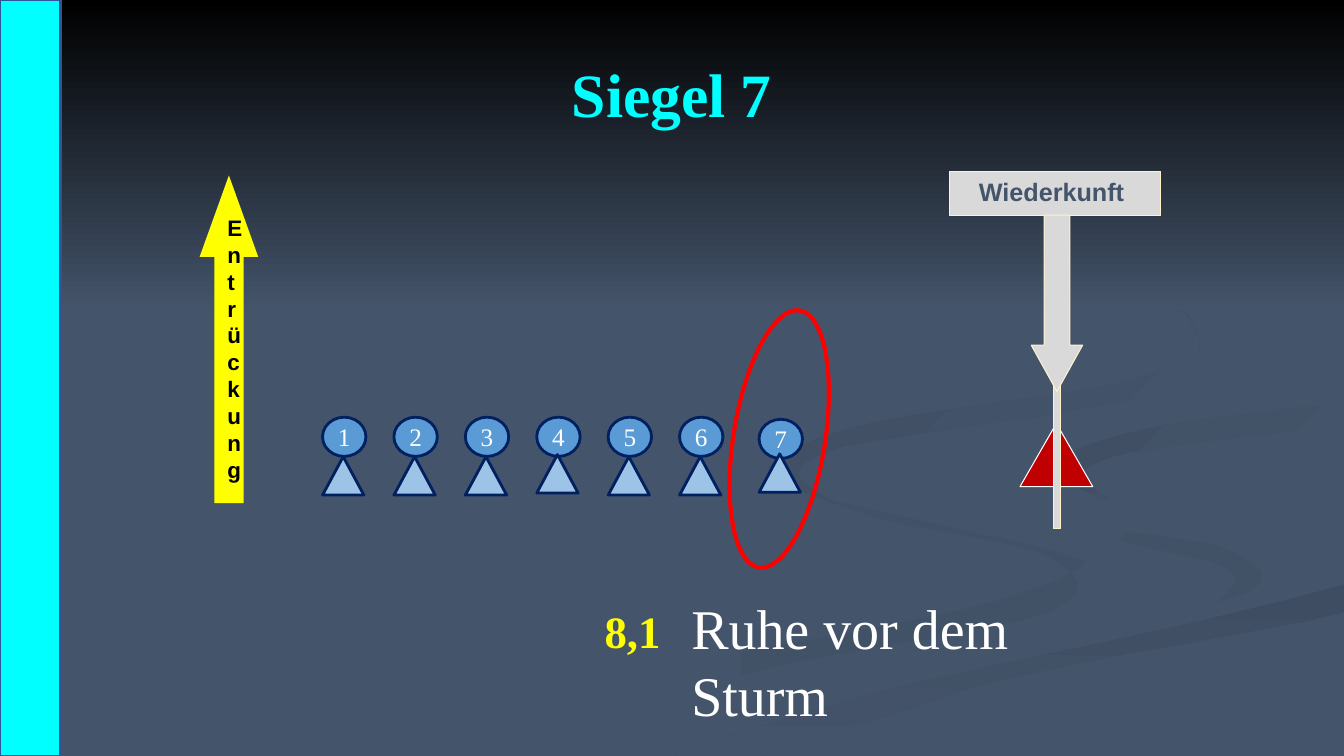
from typing import NamedTuple

from lxml import etree
from pptx import Presentation
from pptx.dml.color import RGBColor
from pptx.enum import shapes as kinds, text as modes
from pptx.oxml import ns
from pptx.util import Pt

Kind = kinds.MSO_SHAPE
Align = modes.PP_ALIGN
Anchor = modes.MSO_ANCHOR
SERIF, SANS = "Times New Roman", "Arial"
BASE, NAVY, CYAN, YELLOW = "44546A", "002060", "00FFFF", "FFFF00"
GREY, CREAM, WHITE = "D9D9D9", "FFF2CC", "FFFFFF"
STEPS = 6


class Box(NamedTuple):
    x: float
    y: float
    w: float
    h: float


class Font(NamedTuple):
    name: str
    size: float
    color: str
    bold: bool = False


class Line(NamedTuple):
    color: str
    width: float


class Swoosh(NamedTuple):
    first: str
    last: str
    angle: int
    dots: list


def rgb(code: str) -> RGBColor:
    return RGBColor.from_string(code)


def blend(shape, first: str, last: str, angle: int) -> None:
    shape.shadow.inherit = False
    shape.line.fill.background()
    shape.fill.gradient()
    shape.fill.gradient_angle = angle
    for stop, code in zip(shape.fill.gradient_stops, (first, last)):
        stop.color.rgb = rgb(code)


def curve(dots: list) -> list:
    """Round a closed outline with a Catmull-Rom spline."""
    out = []
    for i in range(len(dots)):
        near = [dots[(i + k) % len(dots)] for k in (-1, 0, 1, 2)]
        for t in (k / STEPS for k in range(STEPS)):
            out.append(tuple(
                b + t * (c - a + t * (2 * a - 5 * b + 4 * c - d
                                      + t * (3 * b - a - 3 * c + d))) / 2
                for a, b, c, d in zip(*near)))
    return out


def write(frame, words: str, font: Font, align=Align.LEFT, anchor=Anchor.TOP):
    frame.word_wrap = True
    frame.vertical_anchor = anchor
    para = frame.paragraphs[0]
    para.alignment = align
    run = para.add_run()
    run.text = words
    run.font.name, run.font.size, run.font.bold = font.name, Pt(font.size), font.bold
    run.font.color.rgb = rgb(font.color)
    return run


def draw(kind, box: Box, fill: str = "", line: Line | None = None, adj=()):
    shape = slide.shapes.add_shape(kind, *map(Pt, box))
    shape.shadow.inherit = False
    if fill:
        shape.fill.solid()
        shape.fill.fore_color.rgb = rgb(fill)
    else:
        shape.fill.background()
    if line:
        shape.line.color.rgb = rgb(line.color)
        shape.line.width = Pt(line.width)
    else:
        shape.line.fill.background()
    for i, value in enumerate(adj):
        shape.adjustments[i] = value
    return shape


def label(box: Box, words: str, font: Font, align=Align.LEFT):
    shape = slide.shapes.add_textbox(*map(Pt, box))
    write(shape.text_frame, words, font, align)
    return shape


def shade(run) -> None:
    """Add a soft shadow to the letters of a run."""
    fill = run.font.fill._xPr.find(ns.qn("a:solidFill"))
    fill.addnext(etree.fromstring(
        f'<a:effectLst {ns.nsdecls("a")}><a:outerShdw blurRad="38100" dist="38100" '
        'dir="2700000" algn="tl"><a:srgbClr val="000000"/></a:outerShdw></a:effectLst>'))


SWOOSHES = [
    Swoosh(BASE, "415166", 0, [
        (750, 398), (634, 372), (557, 343), (553, 331), (575, 352), (750, 393),
        (768, 407), (685, 436), (440, 485), (288, 539), (347, 539), (542, 479),
        (750, 437)]),
    Swoosh(BASE, "415166", 315, [
        (905, 410), (868, 389), (727, 367), (695, 334), (709, 357), (783, 382),
        (874, 405), (876, 424), (858, 436), (896, 426)]),
    Swoosh("3E4D61", BASE, 270, [
        (483, 539), (549, 539), (722, 484), (958, 438), (958, 418), (734, 466),
        (546, 518)]),
    Swoosh(BASE, BASE, 0, [
        (695, 334), (729, 359), (868, 389), (894, 422), (748, 456), (458, 539),
        (605, 499), (958, 418), (958, 387), (772, 349), (768, 318), (958, 290),
        (958, 279), (740, 304)]),
    Swoosh("404F64", BASE, 315, [
        (750, 331), (759, 344), (793, 357), (773, 340), (809, 323), (958, 302),
        (958, 289), (815, 307)]),
    Swoosh("3F4E63", BASE, 315, [
        (656, 310), (820, 282), (857, 248), (829, 210), (732, 168), (827, 210),
        (853, 241), (808, 272), (623, 302), (554, 333), (597, 360), (570, 338),
        (599, 320)]),
]

deck = Presentation()
deck.slide_width, deck.slide_height = Pt(960), Pt(540)
slide = deck.slides.add_slide(deck.slide_layouts[5])
slide.background.fill.solid()
slide.background.fill.fore_color.rgb = rgb(BASE)

for item in SWOOSHES:
    start, *rest = curve(item.dots)
    pen = slide.shapes.build_freeform(*start, scale=Pt(1))
    pen.add_line_segments(rest)
    blend(pen.convert_to_shape(), item.first, item.last, item.angle)
blend(draw(Kind.RECTANGLE, Box(0, 0, 960, 221.8)), "000000", BASE, 270)

title = slide.shapes.title
title.left, title.top, title.width, title.height = map(Pt, Box(48, 21.6, 864, 90))
shade(write(title.text_frame, "Siegel 7", Font(SERIF, 44, CYAN, True),
            Align.CENTER, Anchor.MIDDLE))
title.element.getparent().append(title.element)  # in front of the backdrop

edge = Line(NAVY, 2)
heads = [(230.4 + 51 * i, 298) for i in range(6)] + [(542.2, 299.5)]
for num, (x, y) in enumerate(heads, 1):
    frame = draw(Kind.OVAL, Box(x, y, 31, 28), "5B9BD5", edge).text_frame
    frame.margin_left = frame.margin_right = frame.margin_top = frame.margin_bottom = 0
    write(frame, str(num), Font(SERIF, 18, WHITE), Align.CENTER, Anchor.MIDDLE)
lifts = {4: 1.5, 7: 2}
for num, (x, _) in enumerate(heads, 1):
    draw(Kind.ISOSCELES_TRIANGLE, Box(x, 326.2 - lifts.get(num, 0), 29.5, 27.4),
         "9DC3E6", edge)

draw(Kind.UP_ARROW, Box(142.6, 125.3, 41.8, 234), YELLOW, adj=(0.5, 1.39))
rise = label(Box(60.5, 248.4, 208, 10), "Entrückung",
             Font(SANS, 16, "000000", True), Align.CENTER)
rise.rotation = 270
rise.text_frame._txBody.bodyPr.set("vert", "eaVert")

rim = Line(CREAM, 0.75)
draw(Kind.ISOSCELES_TRIANGLE, Box(728.6, 302.4, 52, 45.2), "C00000", Line(WHITE, 0.75))
draw(Kind.RECTANGLE, Box(752.4, 212.4, 5, 165.4), GREY, rim)
sign = draw(Kind.RECTANGLE, Box(678, 122.4, 151.2, 31.4), GREY, rim)
write(sign.text_frame, "Wiederkunft", Font(SANS, 18, BASE, True), Align.CENTER)
sign.text_frame.margin_right = Pt(12)
draw(Kind.DOWN_ARROW, Box(736.6, 153.6, 36.7, 126), GREY, rim, (0.5, 0.9))

draw(Kind.RECTANGLE, Box(0, 0, 43.2, 540), CYAN, Line("2F5597", 2))
draw(Kind.OVAL, Box(463.7, 280.8, 185.8, 65.5), line=Line("FF0000", 3)).rotation = 279
label(Box(424.8, 427.7, 116, 46), "8,1", Font(SERIF, 32, YELLOW, True))
label(Box(486.7, 420.5, 330, 55.4), "Ruhe vor dem Sturm", Font(SERIF, 40, WHITE))

deck.save("out.pptx")
